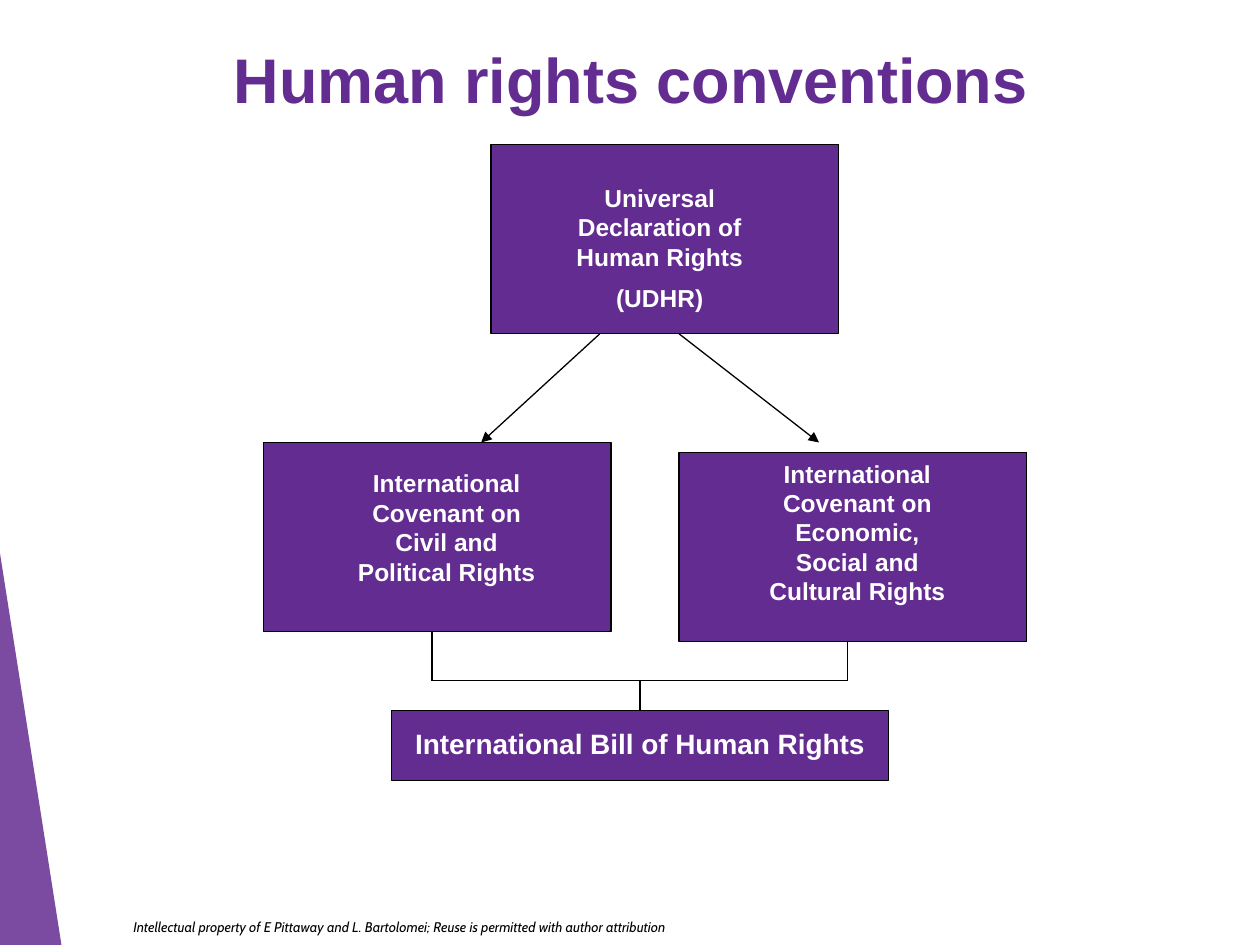
from lxml.etree import SubElement
from pptx import Presentation
from pptx.dml.color import RGBColor
from pptx.enum.shapes import MSO_CONNECTOR, MSO_SHAPE
from pptx.enum.text import MSO_ANCHOR, PP_ALIGN
from pptx.oxml.ns import qn
from pptx.util import Cm, Pt

PURPLE, BLACK, WHITE = "632C90", "000000", "FFFFFF"
BOX_W, BOX_H = 7.01, 3.81


def paint(part, tone):
    """Give a fill a solid colour from a hex string."""
    part.solid()
    part.fore_color.rgb = RGBColor.from_string(tone)


def add_box(slide, left, top, width=BOX_W, height=BOX_H):
    """Draw a purple box with a thin black outline."""
    box = slide.shapes.add_shape(
        MSO_SHAPE.RECTANGLE, Cm(left), Cm(top), Cm(width), Cm(height))
    box.shadow.inherit = False
    paint(box.fill, PURPLE)
    paint(box.line.fill, BLACK)
    box.line.width = Pt(0.75)


def add_line(slide, start, end, arrow=False):
    """Join two points with a black line, with an arrowhead if asked."""
    line = slide.shapes.add_connector(
        MSO_CONNECTOR.STRAIGHT, *map(Cm, start + end))
    paint(line.line.fill, BLACK)
    line.line.width = Pt(0.75)
    if arrow:
        SubElement(line.line._get_or_add_ln(), qn("a:tailEnd"), type="triangle")
    SubElement(line._element.spPr, qn("a:effectLst"))


def add_text(slide, area, lines, size, tone=WHITE, face="Arial",
             align=PP_ALIGN.CENTER, bold=True, italic=False,
             anchor=MSO_ANCHOR.TOP):
    """Place wrapped text, one paragraph for each line."""
    frame = slide.shapes.add_textbox(*map(Cm, area)).text_frame
    frame.word_wrap = True
    frame.vertical_anchor = anchor
    for index, line in enumerate(lines):
        para = frame.add_paragraph() if index else frame.paragraphs[0]
        para.alignment = align
        if index:
            para.space_before = Pt(size / 2)
        run = para.add_run()
        run.text = line
        font = run.font
        font.size, font.name = Pt(size), face
        font.bold, font.italic = bold, italic
        paint(font.fill, tone)


def add_wedge(slide):
    """Draw the translucent purple wedge at the lower left edge."""
    pen = slide.shapes.build_freeform(Cm(0), Cm(11.15))
    pen.add_line_segments([(Cm(1.24), Cm(19.05)), (Cm(0), Cm(19.05))])
    wedge = pen.convert_to_shape()
    wedge.shadow.inherit = False
    paint(wedge.fill, PURPLE)
    wedge.line.fill.background()
    tone = wedge._element.spPr.find(qn("a:solidFill"))[0]
    SubElement(tone, qn("a:alpha"), val="85000")


def main():
    """Build the slide and save it."""
    deck = Presentation()
    deck.slide_width, deck.slide_height = Cm(25.4), Cm(19.05)
    slide = deck.slides.add_slide(deck.slide_layouts[6])

    add_wedge(slide)
    add_text(slide, (2.44, 18.39, 14.73, 0.61),
             ["Intellectual property of E Pittaway and L. Bartolomei; "
              "Reuse is permitted with author attribution"],
             8, BLACK, "Cabin", PP_ALIGN.LEFT, bold=False, italic=True)
    add_text(slide, (1.9, 0.69, 21.64, 1.78), ["Human rights conventions"],
             36, PURPLE, anchor=MSO_ANCHOR.MIDDLE)

    add_box(slide, 13.69, 9.12)
    add_box(slide, 5.31, 8.92)
    add_box(slide, 9.9, 2.92)
    add_box(slide, 7.9, 14.33, 10.01, 1.4)

    add_line(slide, (12.09, 6.73), (9.7, 8.92), arrow=True)
    add_line(slide, (13.69, 6.73), (16.51, 8.92), arrow=True)
    left, mid, right, level = 8.71, 12.9, 17.09, 13.72
    add_line(slide, (left, 12.73), (left, level))
    add_line(slide, (right, 12.93), (right, level))
    add_line(slide, (left, level), (right, level))
    add_line(slide, (mid, level), (mid, 14.33))

    add_text(slide, (10.9, 3.56, 4.8, 2.95),
             ["Universal Declaration of Human Rights", "(UDHR)"], 14)
    add_text(slide, (6.91, 9.32, 4.19, 2.64),
             ["International Covenant on Civil and Political Rights"], 14)
    add_text(slide, (15.09, 9.12, 4.39, 3.25),
             ["International Covenant on Economic, Social and Cultural Rights"], 14)
    add_text(slide, (7.9, 14.53, 10.01, 0.94),
             ["International Bill of Human Rights"], 16)
    deck.save("out.pptx")


if __name__ == "__main__":
    main()
